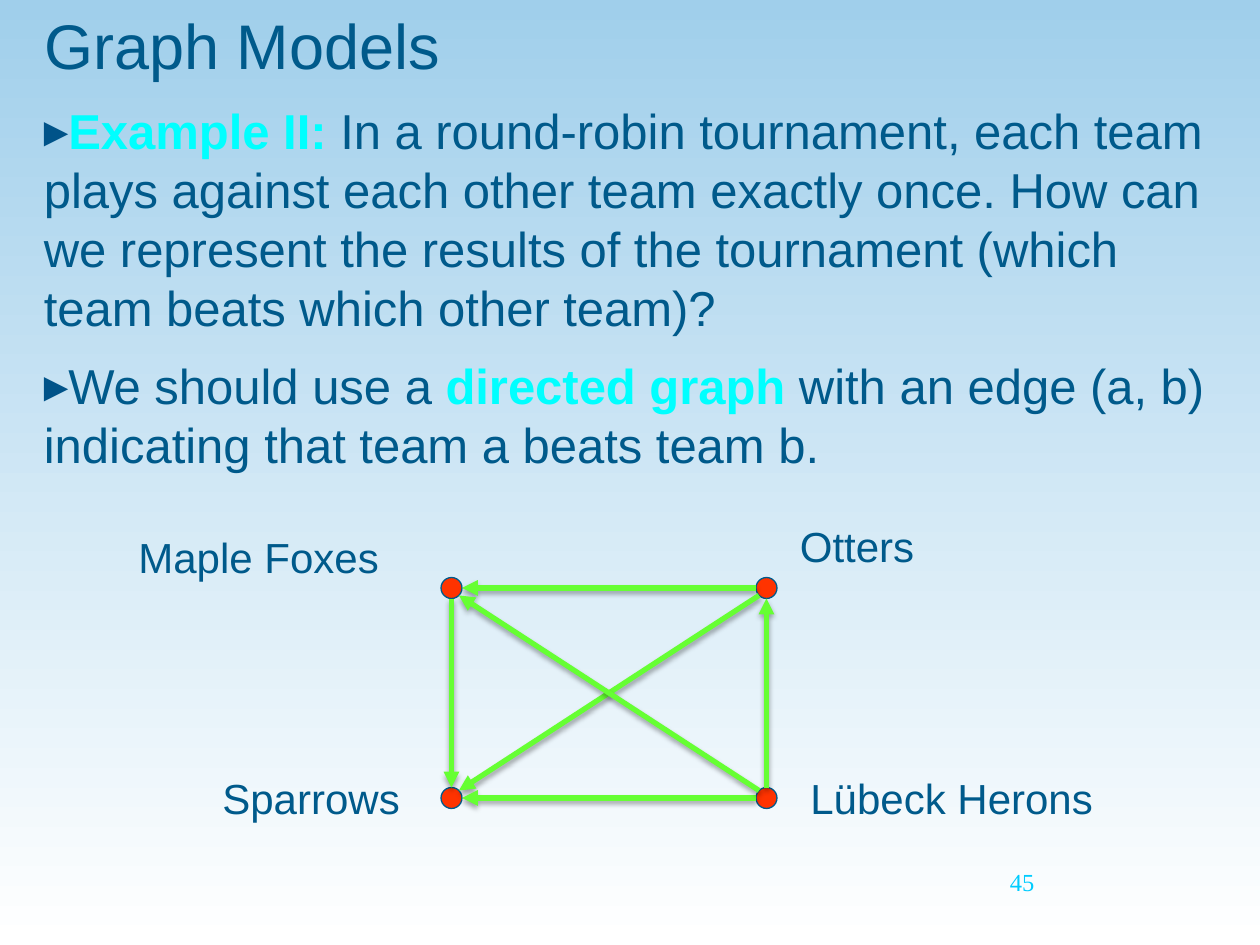
from math import hypot

from lxml import etree
from pptx import Presentation
from pptx.dml.color import RGBColor
from pptx.enum.shapes import MSO_CONNECTOR, MSO_SHAPE
from pptx.enum.text import MSO_ANCHOR, PP_ALIGN
from pptx.oxml import parse_xml
from pptx.oxml.ns import nsdecls, qn
from pptx.util import Inches, Pt

STRAIGHT = MSO_CONNECTOR.STRAIGHT
NODE_SHAPE = MSO_SHAPE.FLOWCHART_CONNECTOR
LEFT = PP_ALIGN.LEFT
TOP = MSO_ANCHOR.TOP

TEXT, ACCENT, BULLET = "005A8B", "00FFFF", "005389"
NODE, EDGE, NUMBER = "FF3300", "66FF33", "00CCFF"
SKY, WHITE = "A0CFEB", "FFFFFF"

EDGE_SHADOW = f"""<a:effectLst {nsdecls('a')}>
  <a:outerShdw blurRad="{Pt(3.1)}" dist="{Pt(1.8)}" dir="5400000" rotWithShape="0">
    <a:srgbClr val="000000"><a:alpha val="35000"/></a:srgbClr>
  </a:outerShdw>
</a:effectLst>"""


def color(hex_string):
    return RGBColor.from_string(hex_string)


def cells(count):
    """Length of a number of grid cells, twelve to the inch."""
    return Inches(count / 12)


def sign(value):
    return (value > 0) - (value < 0)


class GraphSlide:
    font = "Arial"
    node_radius = 1

    def __init__(self, presentation):
        self.slide = presentation.slides.add_slide(presentation.slide_layouts[5])

    def background(self, top, bottom):
        fill = self.slide.background.fill
        fill.gradient()
        fill.gradient_angle = 270
        for stop, position, shade in zip(fill.gradient_stops, (0, 1), (top, bottom)):
            stop.position = position
            stop.color.rgb = color(shade)

    def add_run(self, paragraph, text, size, shade=TEXT, bold=False, font=font):
        run = paragraph.add_run()
        run.text = text
        run.font.name = font
        run.font.size = Pt(size)
        run.font.bold = bold
        run.font.color.rgb = color(shade)

    def title(self, text, box, size):
        shape = self.slide.shapes.title
        shape.left, shape.top, shape.width, shape.height = map(cells, box)
        shape.text_frame.vertical_anchor = TOP
        paragraph = shape.text_frame.paragraphs[0]
        paragraph.alignment = LEFT
        self.add_run(paragraph, text, size)

    def text_frame(self, box):
        frame = self.slide.shapes.add_textbox(*map(cells, box)).text_frame
        frame.word_wrap = True
        frame.vertical_anchor = TOP
        return frame

    def label(self, text, box, size, **style):
        self.add_run(self.text_frame(box).paragraphs[0], text, size, **style)

    def bullets(self, items, box, size):
        frame = self.text_frame(box)
        for index, runs in enumerate(items):
            paragraph = frame.add_paragraph() if index else frame.paragraphs[0]
            paragraph.space_before = Pt(size * 0.2 if index else 0)
            paragraph.space_after = Pt(size * 0.2)
            properties = paragraph._p.get_or_add_pPr()
            bullet_color = etree.SubElement(properties, qn("a:buClr"))
            etree.SubElement(bullet_color, qn("a:srgbClr"), val=BULLET)
            etree.SubElement(properties, qn("a:buFont"), typeface=self.font)
            etree.SubElement(properties, qn("a:buChar"), char="▸")
            for text, highlighted in runs:
                self.add_run(paragraph, text, size,
                             ACCENT if highlighted else TEXT, highlighted)

    def node(self, center):
        radius = self.node_radius
        corner = [cells(value - radius) for value in center]
        shape = self.slide.shapes.add_shape(
            NODE_SHAPE, *corner, cells(2 * radius), cells(2 * radius))
        shape.shadow.inherit = False
        shape.fill.solid()
        shape.fill.fore_color.rgb = color(NODE)
        shape.line.color.rgb = color(TEXT)
        shape.line.width = Pt(0.75)

    def edge(self, winner, loser):
        """Arrow between the facing points of two node outlines."""
        across, down = (sign(b - a) for a, b in zip(winner, loser))
        reach = self.node_radius / hypot(across, down)
        offset = across * reach, down * reach
        start = [cells(a + gap) for a, gap in zip(winner, offset)]
        end = [cells(b - gap) for b, gap in zip(loser, offset)]
        connector = self.slide.shapes.add_connector(STRAIGHT, *start, *end)
        connector.line.color.rgb = color(EDGE)
        connector.line.width = Pt(3)
        line = connector.line._get_or_add_ln()
        etree.SubElement(line, qn("a:tailEnd"), type="triangle")
        connector._element.spPr.append(parse_xml(EDGE_SHADOW))


def main():
    presentation = Presentation()
    presentation.slide_width, presentation.slide_height = cells(120), cells(90)
    page = GraphSlide(presentation)
    page.background(SKY, WHITE)

    # Title and explanation
    page.title("Graph Models", (3, 0, 113, 10), 36)
    page.bullets([
        [("Example II: ", True),
         ("In a round-robin tournament, each team plays against each other team "
          "exactly once. How can we represent the results of the tournament "
          "(which team beats which other team)?", False)],
        [("We should use a ", False), ("directed graph", True),
         (" with an edge (a, b) indicating that team a beats team b.", False)],
    ], (3, 9, 115, 38), 28)

    # Slide number
    page.label("45", (95, 82, 25, 6), 14, shade=NUMBER, font="Times New Roman")

    # Teams: node centre and label box
    left, right, top, bottom = 43, 73, 56, 76
    teams = {
        "Sparrows": ((left, bottom), (20, 73, 22, 7)),
        "Otters": ((right, top), (75, 49, 21, 7)),
        "Lübeck Herons": ((right, bottom), (76, 73, 36, 7)),
        "Maple Foxes": ((left, top), (12, 50, 31, 7)),
    }
    for name, (center, box) in teams.items():
        page.node(center)
        page.label(name, box, 24)

    # Results: winner to loser
    results = [
        ("Maple Foxes", "Sparrows"),
        ("Otters", "Maple Foxes"),
        ("Otters", "Sparrows"),
        ("Lübeck Herons", "Sparrows"),
        ("Lübeck Herons", "Maple Foxes"),
        ("Lübeck Herons", "Otters"),
    ]
    for winner, loser in results:
        page.edge(teams[winner][0], teams[loser][0])

    presentation.save("out.pptx")


if __name__ == "__main__":
    main()
